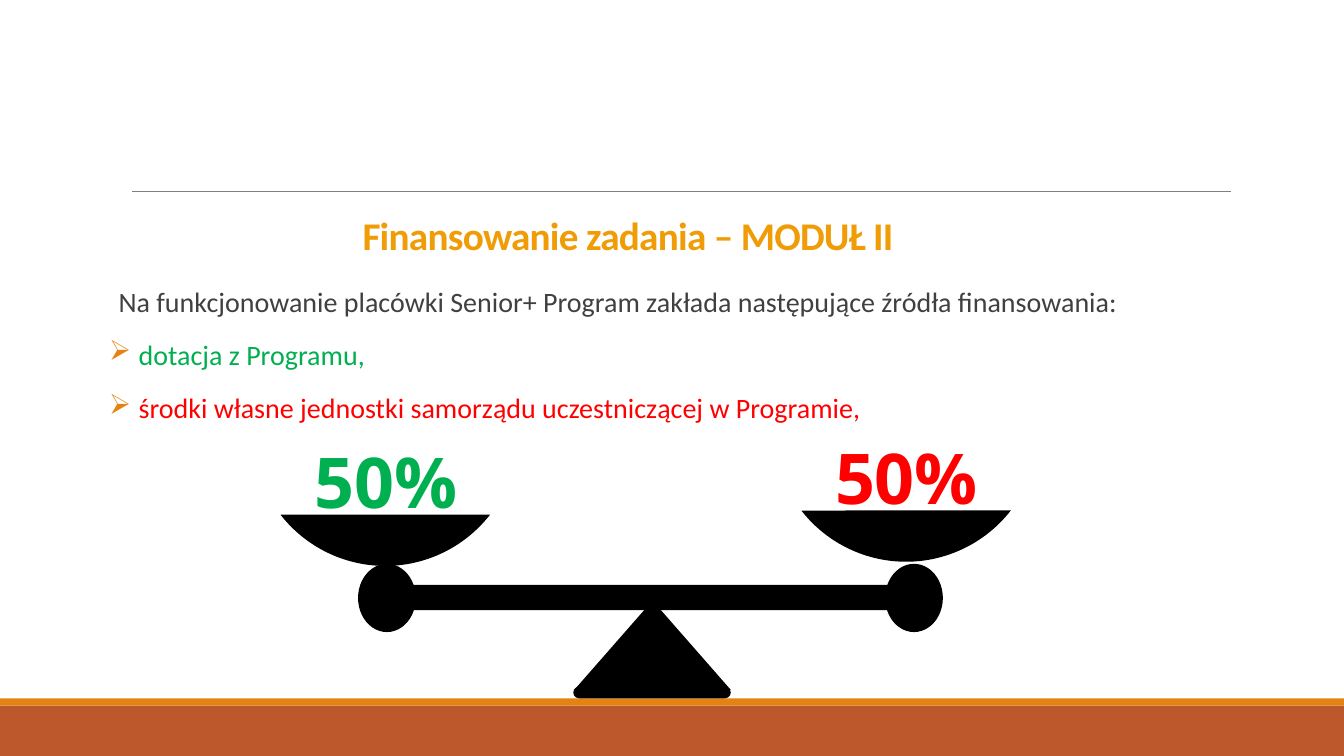
"""Build the slide on financing of module II with a balanced scale."""
from lxml import etree
from pptx import Presentation
from pptx import util as u
from pptx.dml.color import RGBColor
from pptx.enum import shapes, text
from pptx.oxml.ns import qn

PX = 9525
BLACK = RGBColor(0x00, 0x00, 0x00)
GRAY = RGBColor(0x80, 0x80, 0x80)
DARK = RGBColor(0x40, 0x40, 0x40)
GOLD = RGBColor(0xF0, 0x9C, 0x06)
ORANGE = RGBColor(0xE4, 0x83, 0x12)
RUST = RGBColor(0xBD, 0x58, 0x2C)
GREEN = RGBColor(0x00, 0xB0, 0x50)
RED = RGBColor(0xFF, 0x00, 0x00)
KIND = shapes.MSO_SHAPE


def add_solid(parent, kind, box, color, adjustments=()):
    shape = parent.shapes.add_shape(kind, *[n * PX for n in box])
    shape.shadow.inherit = False
    shape.fill.solid()
    shape.fill.fore_color.rgb = color
    shape.line.fill.background()
    for index, value in enumerate(adjustments):
        shape.adjustments[index] = value


def write(paragraph, words, color, **formats):
    run = paragraph.add_run()
    run.text = words
    run.font.color.rgb = color
    for name, value in formats.items():
        setattr(run.font, name, value)
    return run


presentation = Presentation()
presentation.slide_width = 1280 * PX
presentation.slide_height = 720 * PX
slide = presentation.slides.add_slide(presentation.slide_layouts[5])

add_solid(slide, KIND.RECTANGLE, (0, 672, 1280, 48), RUST)
add_solid(slide, KIND.RECTANGLE, (0, 665, 1280, 7), ORANGE)
rule = slide.shapes.add_connector(
    shapes.MSO_CONNECTOR.STRAIGHT, 126 * PX, 182 * PX, 1172 * PX, 182 * PX)
rule.line.color.rgb = GRAY
rule.line.width = u.Pt(0.5)
etree.SubElement(rule._element.spPr, qn("a:effectLst"))

title = slide.shapes.title
title_box = dict(left=112, top=158, width=972, height=93)
for name, value in title_box.items():
    setattr(title, name, value * PX)
title_format = dict(vertical_anchor=text.MSO_ANCHOR.BOTTOM,
                    auto_size=text.MSO_AUTO_SIZE.NONE, word_wrap=True)
for name, value in title_format.items():
    setattr(title.text_frame, name, value)
paragraph = title.text_frame.paragraphs[0]
paragraph.alignment = text.PP_ALIGN.CENTER
paragraph.line_spacing = 0.85
heading = write(paragraph, "Finansowanie zadania – MODUŁ II", GOLD,
                name="Calibri", size=u.Pt(28), bold=True)
heading.font._element.set("spc", "-50")

body = slide.shapes.add_textbox(104 * PX, 266 * PX, 1083 * PX, 155 * PX)
frame = body.text_frame
for name, value in dict(word_wrap=True, margin_left=0, margin_right=0).items():
    setattr(frame, name, value)
sources = [
    ("Na funkcjonowanie placówki Senior+ Program zakłada następujące źródła finansowania:", DARK, None),
    ("dotacja z Programu,", GREEN, "➢"),
    ("środki własne jednostki samorządu uczestniczącej w Programie,", RED, "➢"),
]
for index, (words, color, bullet) in enumerate(sources):
    paragraph = frame.add_paragraph() if index else frame.paragraphs[0]
    paragraph.space_before = u.Pt(12 if index else 0)
    paragraph.space_after = u.Pt(2)
    properties = paragraph._p.get_or_add_pPr()
    indent = 28 if bullet else 9
    properties.set("marL", str(indent * PX))
    if bullet:
        properties.set("indent", str(-indent * PX))
        bullet_color = etree.SubElement(properties, qn("a:buClr"))
        etree.SubElement(bullet_color, qn("a:srgbClr"), val=str(ORANGE))
        etree.SubElement(properties, qn("a:buChar"), char=bullet)
    write(paragraph, words, color, name="Calibri", size=u.Pt(20))

base = slide.shapes.add_group_shape()
add_solid(base, KIND.ISOSCELES_TRIANGLE, (547, 572, 149, 85), BLACK)
add_solid(base, KIND.ROUNDED_RECTANGLE, (546, 654, 150, 11), BLACK, [0.5])
beam = slide.shapes.add_group_shape()
add_solid(beam, KIND.ROUNDED_RECTANGLE, (368, 557, 503, 24), BLACK, [0.5])
for left in (341, 843):
    add_solid(beam, KIND.OVAL, (left, 537, 55, 65), BLACK)

for left, top, color in ((240, 283, GREEN), (736, 279, RED)):
    add_solid(slide, KIND.CHORD, (left, top, 254, 256), BLACK, [23.06, 84.93])
    share = slide.shapes.add_textbox((left + 27) * PX, (top + 130) * PX, 201 * PX, 90 * PX)
    share.text_frame.word_wrap = True
    share.text_frame.auto_size = text.MSO_AUTO_SIZE.SHAPE_TO_FIT_TEXT
    paragraph = share.text_frame.paragraphs[0]
    paragraph.alignment = text.PP_ALIGN.CENTER
    write(paragraph, "50%", color, name="Open Sans", size=u.Pt(50), bold=True)

presentation.save("out.pptx")
